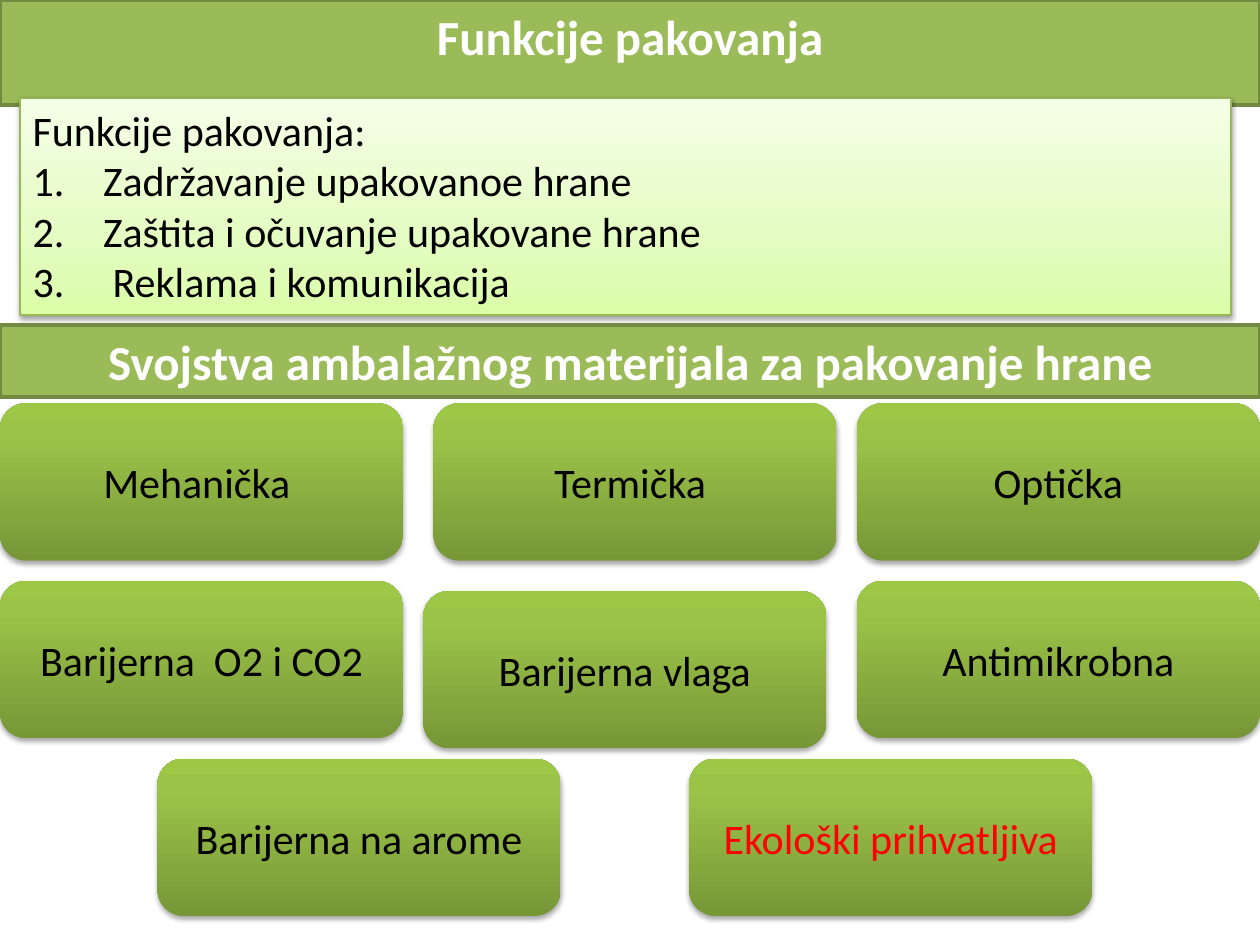
from dataclasses import dataclass

import pptx
import pptx.dml.color
import pptx.enum.shapes
import pptx.enum.text
import pptx.oxml.ns
import pptx.util
from lxml import etree

Inches = pptx.util.Inches
RGBColor = pptx.dml.color.RGBColor
SHAPE = pptx.enum.shapes.MSO_SHAPE
ALIGN = pptx.enum.text.PP_ALIGN
ANCHOR = pptx.enum.text.MSO_ANCHOR
AUTO = pptx.enum.text.MSO_AUTO_SIZE
qn = pptx.oxml.ns.qn

WHITE = RGBColor(0xFF, 0xFF, 0xFF)
BLACK = RGBColor(0x00, 0x00, 0x00)
RED = RGBColor(0xFF, 0x00, 0x00)
BAR_FILL = RGBColor(0x9B, 0xBB, 0x59)
BAR_LINE = RGBColor(0x73, 0x8A, 0x42)
LIST_LINE = RGBColor(0x98, 0xB9, 0x55)
LIST_STOPS = (
    (0, RGBColor(0xDA, 0xFD, 0xA7)),
    (35, RGBColor(0xE4, 0xFC, 0xC2)),
    (100, RGBColor(0xF5, 0xFF, 0xE7)),
)
CARD_STOPS = (
    (0, RGBColor(0x77, 0x97, 0x37)),
    (80, RGBColor(0x9B, 0xC3, 0x48)),
    (100, RGBColor(0x9D, 0xC7, 0x46)),
)

CARD_W, CARD_H = 3.2, 1.25
ROW_1, ROW_2, ROW_3 = (3.2 + i * 1.41 for i in range(3))
RIGHT = 10 - CARD_W
INDENT = 0.56


@dataclass
class Card:
    text: str
    left: float
    top: float
    color: RGBColor = BLACK


CARDS = [
    Card("Mehanička ", 0, ROW_1),
    Card("Barijerna  O2 i CO2", 0, ROW_2),
    Card("Barijerna na arome", 1.25, ROW_3),
    Card("Termička ", 3.44, ROW_1),
    Card("Barijerna vlaga", 3.36, 4.69),
    Card("Ekološki prihvatljiva", 5.47, ROW_3, RED),
    Card("Antimikrobna", RIGHT, ROW_2),
    Card("Optička", RIGHT, ROW_1),
]


def write(p, text: str, *, size=24, color=BLACK, bold=False, align=ALIGN.LEFT) -> None:
    p.alignment = align
    r = p.add_run()
    r.text = text
    r.font.name = "Calibri"
    r.font.size = pptx.util.Pt(size)
    r.font.bold = bold
    r.font.color.rgb = color


def place(sp, left: float, top: float, width: float, height: float) -> None:
    sp.left, sp.top = Inches(left), Inches(top)
    sp.width, sp.height = Inches(width), Inches(height)


def add_box(s, kind, left: float, top: float, width: float, height: float):
    sp = s.shapes.add_shape(kind, 0, 0, 0, 0)
    place(sp, left, top, width, height)
    sp.shadow.inherit = False
    return sp


def set_gradient(sp, stops) -> None:
    sp.fill.gradient()
    sp.fill.gradient_angle = 90
    gs_lst = next(sp.element.spPr.iter(qn("a:gsLst")))
    for gs in list(gs_lst):
        gs_lst.remove(gs)
    for pos, color in stops:
        gs = etree.SubElement(gs_lst, qn("a:gs"), pos=str(pos * 1000))
        etree.SubElement(gs, qn("a:srgbClr"), val=str(color))


def set_shadow(sp, alpha: int, distance: float) -> None:
    effects = sp.element.spPr.find(qn("a:effectLst"))
    shadow = etree.SubElement(
        effects, qn("a:outerShdw"),
        blurRad=str(pptx.util.Pt(3.1)), dist=str(pptx.util.Pt(distance)),
        dir="5400000", rotWithShape="0",
    )
    color = etree.SubElement(shadow, qn("a:srgbClr"), val=str(BLACK))
    etree.SubElement(color, qn("a:alpha"), val=str(alpha * 1000))


def format_bar(sp, text: str) -> None:
    sp.fill.solid()
    sp.fill.fore_color.rgb = BAR_FILL
    sp.line.color.rgb = BAR_LINE
    sp.line.width = pptx.util.Pt(2)
    tf = sp.text_frame
    tf.word_wrap = True
    tf.auto_size = AUTO.SHAPE_TO_FIT_TEXT
    tf.vertical_anchor = ANCHOR.TOP
    write(tf.paragraphs[0], text, size=28, color=WHITE, bold=True, align=ALIGN.CENTER)


def add_list(s) -> None:
    sp = add_box(s, SHAPE.RECTANGLE, 0.16, 0.78, 9.61, 1.72)
    set_gradient(sp, LIST_STOPS)
    set_shadow(sp, 38, 1.6)
    sp.line.color.rgb = LIST_LINE
    sp.line.width = pptx.util.Pt(0.75)
    tf = sp.text_frame
    tf.word_wrap = True
    tf.auto_size = AUTO.SHAPE_TO_FIT_TEXT
    tf.vertical_anchor = ANCHOR.TOP
    write(tf.paragraphs[0], "Funkcije pakovanja:")
    items = [
        ("Zadržavanje upakovanoe hrane", True),
        ("Zaštita i očuvanje upakovane hrane", True),
        ("3.\t Reklama i komunikacija", False),
    ]
    for text, numbered in items:
        p = tf.add_paragraph()
        write(p, text)
        pPr = p._p.get_or_add_pPr()
        pPr.set("marL", str(Inches(INDENT)))
        pPr.set("indent", str(-Inches(INDENT)))
        if numbered:
            etree.SubElement(pPr, qn("a:buAutoNum"), type="arabicPeriod")


def add_card(s, card: Card) -> None:
    sp = add_box(s, SHAPE.ROUNDED_RECTANGLE, card.left, card.top, CARD_W, CARD_H)
    set_gradient(sp, CARD_STOPS)
    set_shadow(sp, 35, 1.8)
    sp.line.fill.background()
    tf = sp.text_frame
    tf.word_wrap = True
    tf.vertical_anchor = ANCHOR.MIDDLE
    write(tf.paragraphs[0], card.text, color=card.color, align=ALIGN.CENTER)


def main() -> None:
    prs = pptx.Presentation()
    prs.slide_width, prs.slide_height = Inches(10), Inches(7.5)
    s = prs.slides.add_slide(prs.slide_layouts[5])
    title = s.shapes.title
    place(title, 0, 0, 10, 0.57)
    format_bar(title, "Funkcije pakovanja")
    add_list(s)
    bar = add_box(s, SHAPE.RECTANGLE, 0, 2.58, 10, 0.57)
    format_bar(bar, "Svojstva ambalažnog materijala za pakovanje hrane")
    for card in CARDS:
        add_card(s, card)
    prs.save("out.pptx")


if __name__ == "__main__":
    main()
